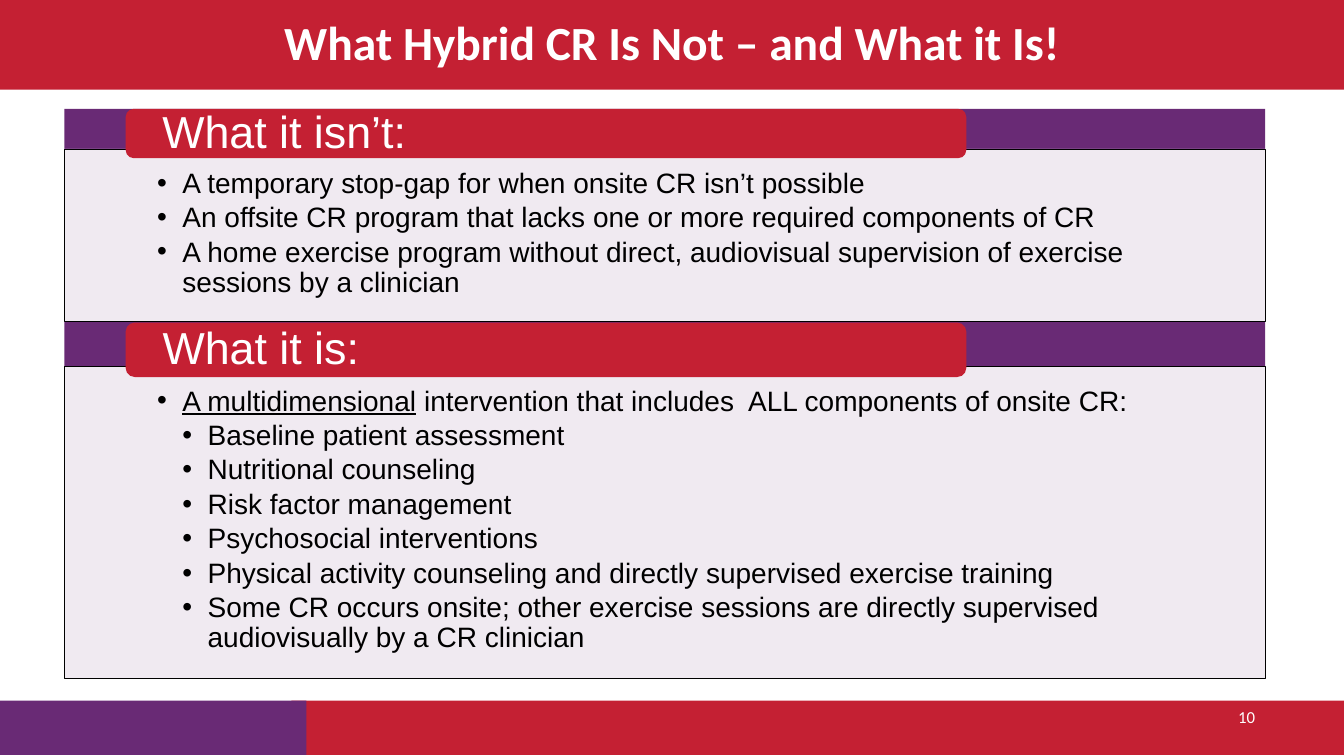
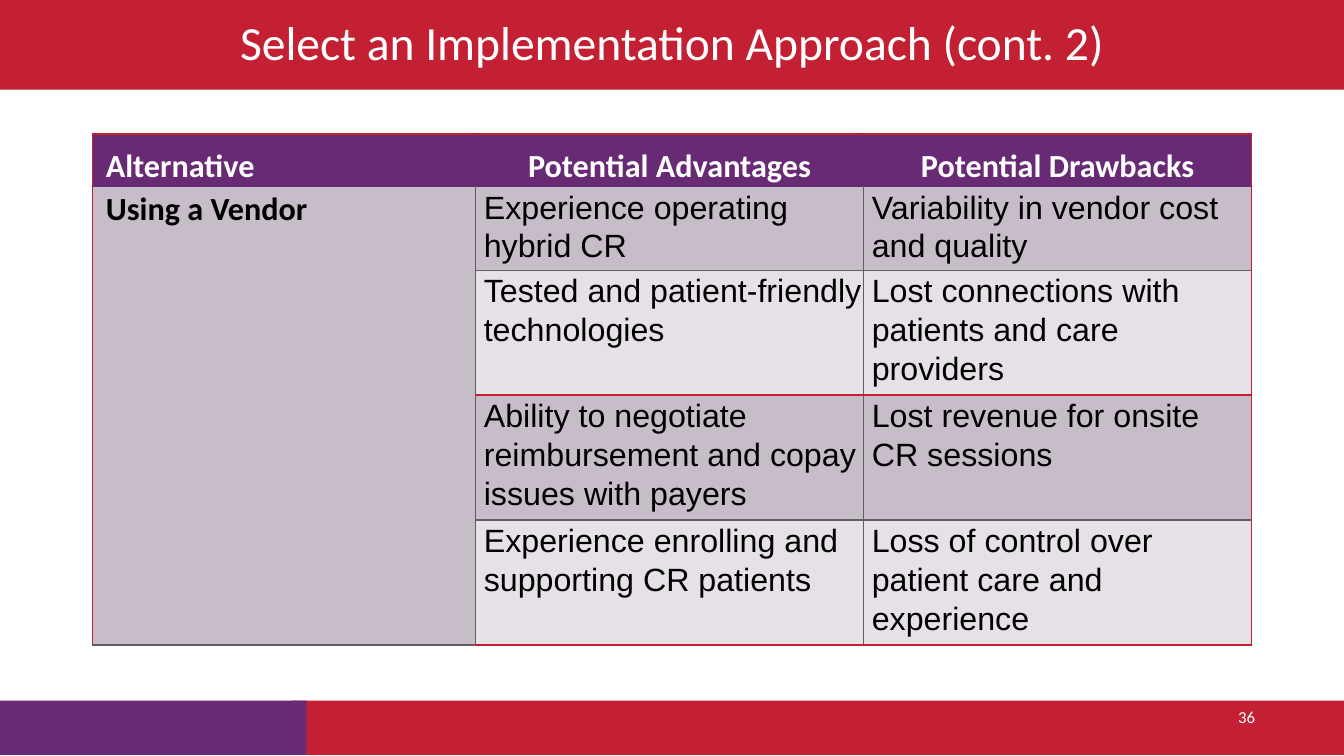
from pptx import Presentation
from pptx.dml.color import RGBColor
from pptx.enum.shapes import MSO_SHAPE
from pptx.enum.text import MSO_ANCHOR, PP_ALIGN
from pptx.oxml.ns import qn
from pptx.util import Inches, Pt
from lxml.etree import SubElement

SLIDE_W, SLIDE_H = Inches(13.333), Inches(7.5)
RED, PURPLE, WHITE, BLACK = "C42033", "692A75", "FFFFFF", "000000"
RULE, DARK_ROW, LIGHT_ROW = "5F5F5F", "C7BDC9", "E5E1E6"
HEADING_FONT, BODY_FONT = "Calibri", "Arial"

HEADER = (0, 0, 100, 11.87)
FOOTER_TOP, FOOTER_H = 92.67, 7.2
PANEL_LEFT, PANEL_W = 4.8, 89.33
TAB_LEFT, TAB_W = 9.35, 62.55
TAB_OVERHANG = 0.81

ISNT = [
    (0, "", "A temporary stop-gap for when onsite CR isn’t possible"),
    (0, "", "An offsite CR program that lacks one or more required components of CR"),
    (0, "", "A home exercise program without direct, audiovisual supervision of "
            "exercise sessions by a clinician"),
]
IS = [
    (0, "A multidimensional", " intervention that includes  ALL components of onsite CR:"),
    (1, "", "Baseline patient assessment"),
    (1, "", "Nutritional counseling"),
    (1, "", "Risk factor management"),
    (1, "", "Psychosocial interventions"),
    (1, "", "Physical activity counseling and directly supervised exercise training"),
    (1, "", "Some CR occurs onsite; other exercise sessions are directly supervised "
            "audiovisually by a CR clinician"),
]
SECTIONS = [
    ("What it isn’t:", 14.4, 6.53, 22.85, ISNT),
    ("What it is:", 42.67, 7.2, 41.25, IS),
]
APPROACHES = [
    ("Alternative", "Potential Advantages", "Potential Drawbacks"),
    ("Using a Vendor", "Experience operating hybrid CR",
     "Variability in vendor cost and quality"),
    ("", "Tested and patient-friendly technologies",
     "Lost connections with patients and care providers"),
    ("", "Ability to negotiate reimbursement and copay issues with payers",
     "Lost revenue for onsite CR sessions"),
    ("", "Experience enrolling and supporting CR patients",
     "Loss of control over patient care and experience"),
]
COLUMN_SHARES = (28.5, 28.87, 28.87)
ROW_SHARES = (6.93, 10, 15.47, 15.47, 15.47)


def color(hex_string):
    return RGBColor.from_string(hex_string)


def across(share):
    return round(SLIDE_W * share / 100)


def down(share):
    return round(SLIDE_H * share / 100)


def place(left, top, width, height):
    return across(left), down(top), across(width), down(height)


def style(run, size, font, hex_string, bold=False):
    run.font.size = Pt(size)
    run.font.name = font
    run.font.bold = bold
    run.font.color.rgb = color(hex_string)


def block(slide, area, fill, outline=None, kind=MSO_SHAPE.RECTANGLE, opacity=None):
    shape = slide.shapes.add_shape(kind, *place(*area))
    shape.shadow.inherit = False
    shape.fill.solid()
    shape.fill.fore_color.rgb = color(fill)
    if opacity:
        tint = shape.fill._xPr.find(qn("a:solidFill"))[0]
        SubElement(tint, qn("a:alpha"), val=str(opacity * 1000))
    if outline:
        shape.line.color.rgb = color(outline)
        shape.line.width = Pt(0.5)
    else:
        shape.line.fill.background()
    return shape


def frame_of(shape, side=0.1, top=0.05, bottom=0.05, anchor=MSO_ANCHOR.MIDDLE):
    frame = shape.text_frame
    frame.word_wrap = True
    frame.margin_left = frame.margin_right = Inches(side)
    frame.margin_top, frame.margin_bottom = Inches(top), Inches(bottom)
    frame.vertical_anchor = anchor
    return frame


def label(shape, text, size, font, align, bold=False, **margins):
    frame = frame_of(shape, **margins)
    frame.text = text
    line = frame.paragraphs[0]
    line.alignment = align
    line.line_spacing = 0.9
    style(line.runs[0], size, font, WHITE, bold)


def bullets(shape, items):
    frame = frame_of(shape, 0.92, 0.2, 0.16, MSO_ANCHOR.TOP)
    for index, (level, lead, rest) in enumerate(items):
        line = frame.add_paragraph() if index else frame.paragraphs[0]
        line.text = lead or rest
        if lead:
            line.runs[0].font.underline = True
            line.add_run().text = rest
        line.alignment = PP_ALIGN.LEFT
        line.line_spacing = 0.9
        line.space_after = Pt(3)
        props = line._p.get_or_add_pPr()
        props.set("marL", str(Inches(0.25 * (level + 1))))
        props.set("indent", str(-Inches(0.25)))
        SubElement(props, qn("a:buFont"), typeface=BODY_FONT)
        SubElement(props, qn("a:buChar"), char="•")
        for run in line.runs:
            style(run, 20, BODY_FONT, BLACK)


def section(slide, heading, top, tab_h, body_h, items):
    body_area = (PANEL_LEFT, top + TAB_OVERHANG * tab_h, PANEL_W, body_h)
    bullets(block(slide, body_area, WHITE, BLACK, opacity=90), items)
    tab = block(slide, (TAB_LEFT, top, TAB_W, tab_h), RED, kind=MSO_SHAPE.ROUNDED_RECTANGLE)
    label(tab, heading, 32, BODY_FONT, PP_ALIGN.LEFT, side=0.34, top=0.02, bottom=0.02)


def framed_slide(deck, title, number, bold=False):
    slide = deck.slides.add_slide(deck.slide_layouts[6])
    block(slide, (21.67, FOOTER_TOP, 78.33, FOOTER_H), RED)
    block(slide, (0, FOOTER_TOP, 22.8, FOOTER_H), PURPLE)
    label(block(slide, HEADER, RED), title, 34, HEADING_FONT, PP_ALIGN.CENTER, bold)
    page = slide.shapes.add_textbox(*place(77.25, 92.27, 16.87, 5.33))
    label(page, number, 12, HEADING_FONT, PP_ALIGN.RIGHT)
    return slide


def borders(cell, edges):
    props = cell._tc.get_or_add_tcPr()
    for side, hex_string in zip(("lnL", "lnR", "lnT", "lnB"), edges):
        edge = SubElement(props, qn("a:" + side), w=str(Pt(1)))
        paint = SubElement(edge, qn("a:solidFill"))
        SubElement(paint, qn("a:srgbClr"), val=hex_string)


def edge_colors(row, col, last_row, last_col):
    inner = RULE if row else PURPLE
    rules = [RED, PURPLE] + [RULE] * (last_row - 1) + [RED]
    rules[3] = RED
    return (inner if col else RED, inner if col < last_col else RED,
            rules[row], rules[row + 1])


def fill_cell(cell, text, row, col):
    is_header = row == 0
    cell.margin_left = cell.margin_right = cell.margin_top = Inches(0.01)
    cell.margin_bottom = 0
    cell.vertical_anchor = MSO_ANCHOR.BOTTOM if is_header else MSO_ANCHOR.TOP
    borders(cell, edge_colors(row, col, len(ROW_SHARES) - 1, len(COLUMN_SHARES) - 1))
    cell.fill.solid()
    band = DARK_ROW if row % 2 or col == 0 else LIGHT_ROW
    cell.fill.fore_color.rgb = color(PURPLE if is_header else band)
    if not text:
        return
    cell.text_frame.text = text
    line = cell.text_frame.paragraphs[0]
    line.line_spacing = 1.07
    if is_header and col:
        line.alignment = PP_ALIGN.CENTER
    else:
        line._p.get_or_add_pPr().set("marL", str(Inches(0.07 if col else 0.12)))
    strong = is_header or col == 0
    style(line.runs[0], 23, HEADING_FONT if strong else BODY_FONT,
          WHITE if is_header else BLACK, strong)


def approach_table(slide):
    area = place(6.9, 17.73, sum(COLUMN_SHARES), sum(ROW_SHARES))
    table = slide.shapes.add_table(len(ROW_SHARES), len(COLUMN_SHARES), *area).table
    table.first_row = table.horz_banding = False
    for column, share in zip(table.columns, COLUMN_SHARES):
        column.width = across(share)
    for row, share in zip(table.rows, ROW_SHARES):
        row.height = down(share)
    for row, texts in enumerate(APPROACHES):
        for col, text in enumerate(texts):
            fill_cell(table.cell(row, col), text, row, col)
    table.cell(1, 0).merge(table.cell(len(ROW_SHARES) - 1, 0))


def main():
    deck = Presentation()
    deck.slide_width, deck.slide_height = SLIDE_W, SLIDE_H

    hybrid = framed_slide(deck, "What Hybrid CR Is Not – and What it Is!", "10", bold=True)
    block(hybrid, (PANEL_LEFT, 14.4, PANEL_W, 75.33), PURPLE)
    for details in SECTIONS:
        section(hybrid, *details)

    approach = framed_slide(deck, "Select an Implementation Approach (cont. 2)", "36")
    approach_table(approach)

    deck.save("out.pptx")


if __name__ == "__main__":
    main()
